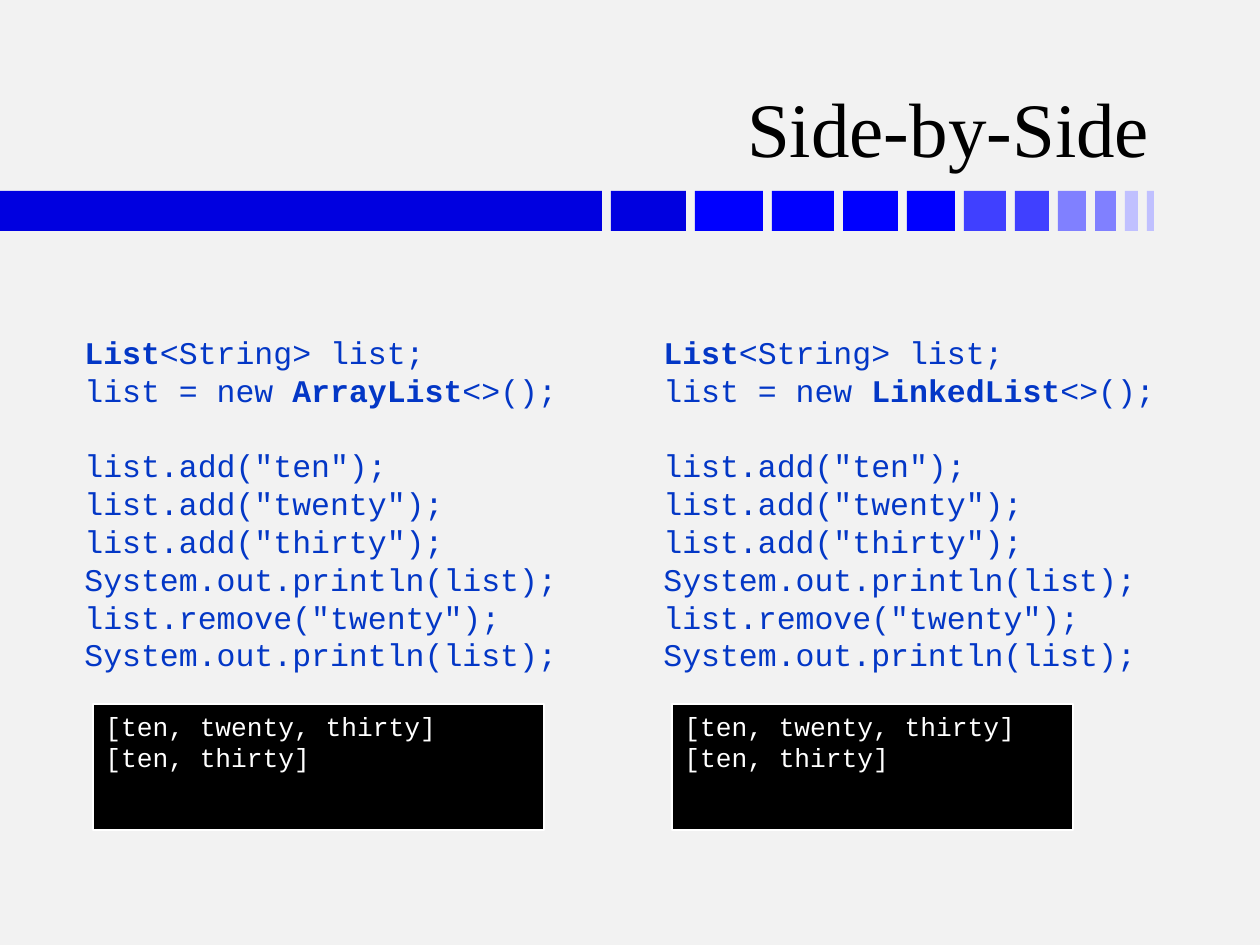
from itertools import chain

from pptx import Presentation
from pptx.dml.color import RGBColor
from pptx.enum.shapes import MSO_SHAPE
from pptx.enum.text import MSO_ANCHOR, PP_ALIGN
from pptx.util import Emu, Pt

SCALE = 914400 / 126
COLORS = {
    "background": "F2F2F2", "title": "000000", "code": "0337C6",
    "console": "000000", "output": "FFFFFF",
    "navy": "0000E0", "blue": "0000FF", "medium": "4040FF",
    "light": "8080FF", "pale": "C0C0FF",
}
CODE_FONT = "Courier New"
BAR_WIDTHS = [602, 75, 68, 62, 55, 48, 42, 34, 28, 21, 13, 7]
BAR_TONES = {"navy": 2, "blue": 4, "medium": 2, "light": 2, "pale": 2}
BAR_GAP = 9
CALLS = [
    'list.add("ten");', 'list.add("twenty");', 'list.add("thirty");',
    "System.out.println(list);", 'list.remove("twenty");',
    "System.out.println(list);",
]
OUTPUT = ["[ten, twenty, thirty]", "[ten, thirty]"]
COLUMNS = [("ArrayList", 72, 93, 451), ("LinkedList", 651, 672, 401)]


def px(n):
    return Emu(round(n * SCALE))


def rgb(name):
    return RGBColor.from_string(COLORS[name])


def write(p, text, *, size, color, font=CODE_FONT, bold=False):
    r = p.add_run()
    r.text = text
    r.font.size, r.font.name, r.font.bold = Pt(size), font, bold
    r.font.color.rgb = rgb(color)


class Deck:
    """Holds the presentation style and the current slide."""

    def __init__(self):
        self.prs = Presentation()
        self.prs.slide_width, self.prs.slide_height = px(1260), px(945)
        self.s = self.prs.slides.add_slide(self.prs.slide_layouts[6])
        fill = self.s.background.fill
        fill.solid()
        fill.fore_color.rgb = rgb("background")

    def rect(self, x, y, w, h, color, line=None):
        sp = self.s.shapes.add_shape(MSO_SHAPE.RECTANGLE, px(x), px(y), px(w), px(h))
        sp.shadow.inherit = False
        sp.fill.solid()
        sp.fill.fore_color.rgb = rgb(color)
        if line:
            sp.line.color.rgb = rgb(line)
            sp.line.width = Pt(1)
        else:
            sp.line.fill.background()
        return sp

    def textbox(self, x, y, w, h, anchor=MSO_ANCHOR.TOP):
        tf = self.s.shapes.add_textbox(px(x), px(y), px(w), px(h)).text_frame
        tf.word_wrap = True
        tf.vertical_anchor = anchor
        return tf

    def title(self, text):
        p = self.textbox(93, 24, 1069, 155, MSO_ANCHOR.BOTTOM).paragraphs[0]
        p.alignment = PP_ALIGN.RIGHT
        write(p, text, size=44, color="title", font="Times New Roman")

    def bar(self):
        tones = chain.from_iterable([tone] * n for tone, n in BAR_TONES.items())
        x = 0
        for w, tone in zip(BAR_WIDTHS, tones):
            self.rect(x, 191, w, 40, tone)
            x += w + BAR_GAP

    def code(self, x, kind):
        tf = self.textbox(x, 323, 538, 426)
        tf.margin_top = px(10)
        lines = [["", "List", "<String> list;"], ["list = new ", kind, "<>();"]]
        lines += [[call] for call in CALLS]
        for i, parts in enumerate(lines):
            p = tf.add_paragraph() if i else tf.paragraphs[0]
            p.line_spacing = Pt(21.6)
            p.space_before = Pt(21.6 if i == 2 else 0)
            for j, part in enumerate(parts):
                if part:
                    write(p, part, size=18, color="code", bold=j == 1)

    def console(self, x, w):
        tf = self.rect(x, 704, w, 126, "console", "output").text_frame
        tf.vertical_anchor = MSO_ANCHOR.TOP
        for i, line in enumerate(OUTPUT):
            p = tf.add_paragraph() if i else tf.paragraphs[0]
            p.alignment = PP_ALIGN.LEFT
            p.line_spacing = Pt(17.8)
            write(p, line, size=15, color="output")


def main():
    deck = Deck()
    deck.bar()
    deck.title("Side-by-Side")
    for kind, code_x, console_x, console_w in COLUMNS:
        deck.code(code_x, kind)
        deck.console(console_x, console_w)
    deck.prs.save("out.pptx")


if __name__ == "__main__":
    main()
